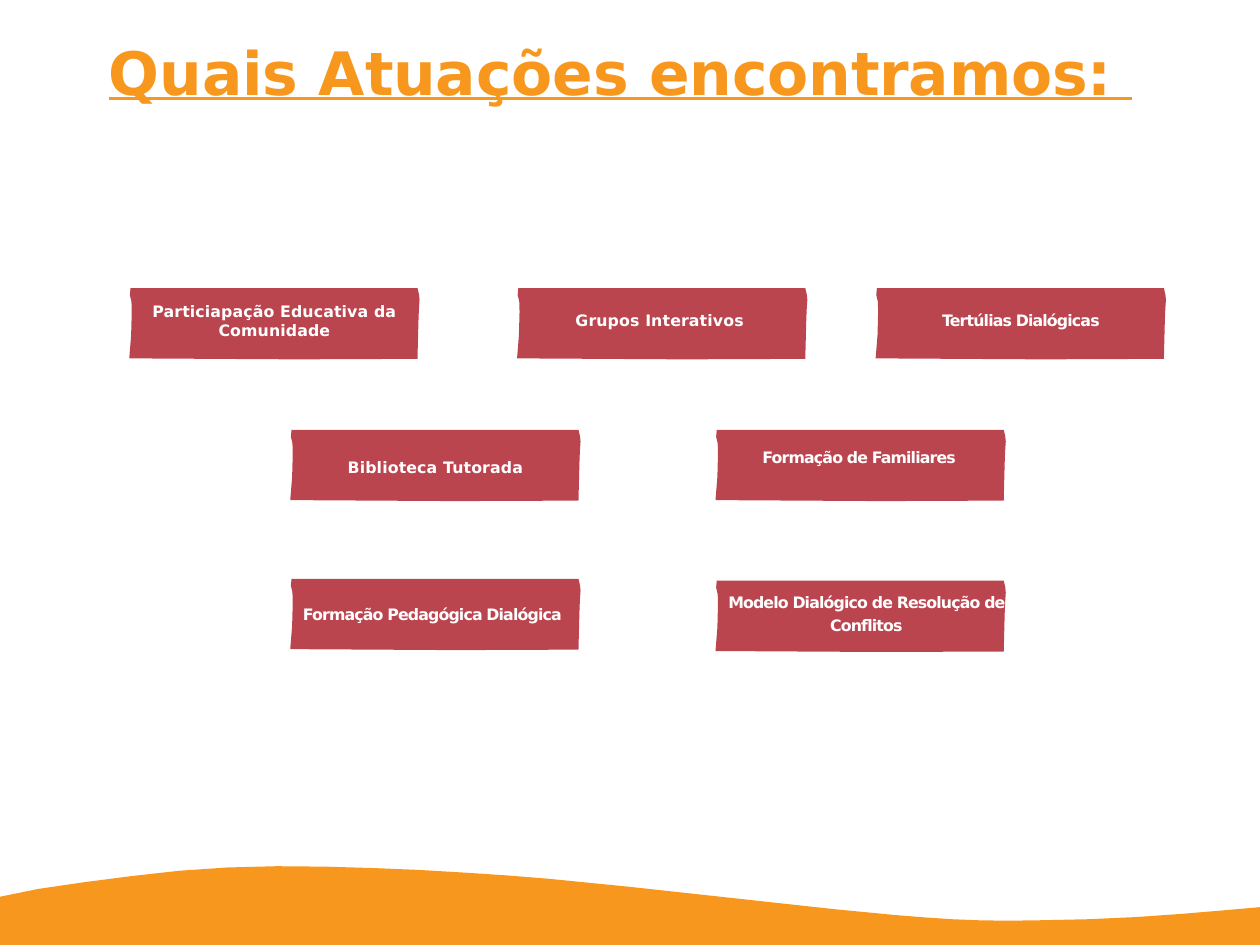
from pptx import Presentation
from pptx.dml.color import RGBColor
from pptx.enum import text as t
from pptx.util import Pt

ORANGE = RGBColor(0xF8, 0x97, 0x1D)
RED = RGBColor(0xBB, 0x45, 0x4F)
WHITE = RGBColor(0xFF, 0xFF, 0xFF)
FONT = "DejaVu Sans"

WIDE, HIGH = 800, 600
CARD_W, CARD_H = 184.3, 45.3
TIGHT, LOOSE = -50, 10  # letter spacing, hundredths of a point

EDGE = [(0.8, 0), (0.4, 4.5), (1.4, 8.5), (1.6, 15), (1.2, 30), (0, 44.7),
        (105.4, 45.3), (183, 45), (183.6, 21.6), (183.9, 14), (184.3, 7.5),
        (184, 4.3), (183, 0)]

CREST = [(0, 19.4), (24.5, 14.4), (54, 10.1), (83.5, 6.3), (113.8, 2.9),
         (144.7, 0.8), (175.7, 0), (206.6, 0.3), (237.6, 1.2), (266.4, 2.4),
         (295.2, 4.1), (322.6, 5.9), (348.5, 8), (398.9, 13), (529.9, 27.3),
         (568.1, 31), (586.8, 32.5), (604.8, 33.7), (622.8, 34.4),
         (640, 34.6), (657.4, 34.4), (690.5, 33.7), (721.4, 32.3),
         (750.2, 30.3), (776.2, 28.1), (800, 26)]

# label, card left and top, text shift right and down, tracking, line spacing
CARDS = [
    ("Particiapação Educativa da Comunidade", 82.1, 182.9, 0, 8.6, LOOSE, 1),
    ("Grupos Interativos", 328.3, 182.9, -1.6, 11.5, LOOSE, 1.26),
    ("Tertúlias Dialógicas", 556, 182.9, 0, 11.5, TIGHT, 1.26),
    ("Biblioteca Tutorada", 184.3, 272.9, 0, 14.4, LOOSE, 1.26),
    ("Formação de Familiares", 454.3, 272.9, -1, 11.5, TIGHT, 1),
    ("Formação Pedagógica Dialógica", 184.3, 367.5, -2, 13.4, TIGHT, 1.26),
    ("Modelo Dialógico de Resolução de Conflitos",
     454.3, 368.7, 3.6, 4.3, TIGHT, 1.26),
]


def draw(slide, left, top, points, color):
    """Fill a closed outline whose points are relative to left and top."""
    spots = [(Pt(left + x), Pt(top + y)) for x, y in points]
    pen = slide.shapes.build_freeform(*spots[0])
    pen.add_line_segments(spots[1:], close=True)
    form = pen.convert_to_shape()
    form.shadow.inherit = False
    form.fill.solid()
    form.fill.fore_color.rgb = color
    form.line.fill.background()


def write(shape, words, size, color, track, align, lead):
    """Set one bold paragraph in a frame without margins."""
    frame = shape.text_frame
    frame.word_wrap = True
    frame.auto_size = t.MSO_AUTO_SIZE.NONE
    frame.vertical_anchor = t.MSO_ANCHOR.TOP
    frame.margin_left = frame.margin_right = 0
    frame.margin_top = frame.margin_bottom = 0
    para = frame.paragraphs[0]
    para.alignment = align
    para.line_spacing = lead
    run = para.add_run()
    run.text = words
    font = run.font
    font.name, font.size, font.bold = FONT, Pt(size), True
    font.color.rgb = color
    run._r.get_or_add_rPr().set("spc", str(track))
    return font


def add_wave(slide, left, top, width, height):
    base = [(width, height), (0, height)]
    draw(slide, left, top, CREST + base, ORANGE)


def add_title(slide, left, top, width, height):
    title = slide.shapes.title
    title.left, title.top = Pt(left), Pt(top)
    title.width, title.height = Pt(width), Pt(height)
    font = write(title, "Quais Atuações encontramos: ", 38, ORANGE, -10,
                 t.PP_ALIGN.LEFT, Pt(37.5))
    font.underline = True


def add_card(slide, label, left, top, right, down, track, lead):
    draw(slide, left, top, EDGE, RED)
    box = slide.shapes.add_textbox(Pt(left + right), Pt(top + down),
                                   Pt(CARD_W), Pt(CARD_H))
    write(box, label, 10, WHITE, track, t.PP_ALIGN.CENTER, lead)


def main():
    deck = Presentation()
    deck.slide_width, deck.slide_height = Pt(WIDE), Pt(HIGH)
    slide = deck.slides.add_slide(deck.slide_layouts[5])
    add_wave(slide, 0, 550, WIDE, 50)
    add_title(slide, 69.1, 31, 661.7, 81.4)
    for card in CARDS:
        add_card(slide, *card)
    deck.save("out.pptx")


if __name__ == "__main__":
    main()
